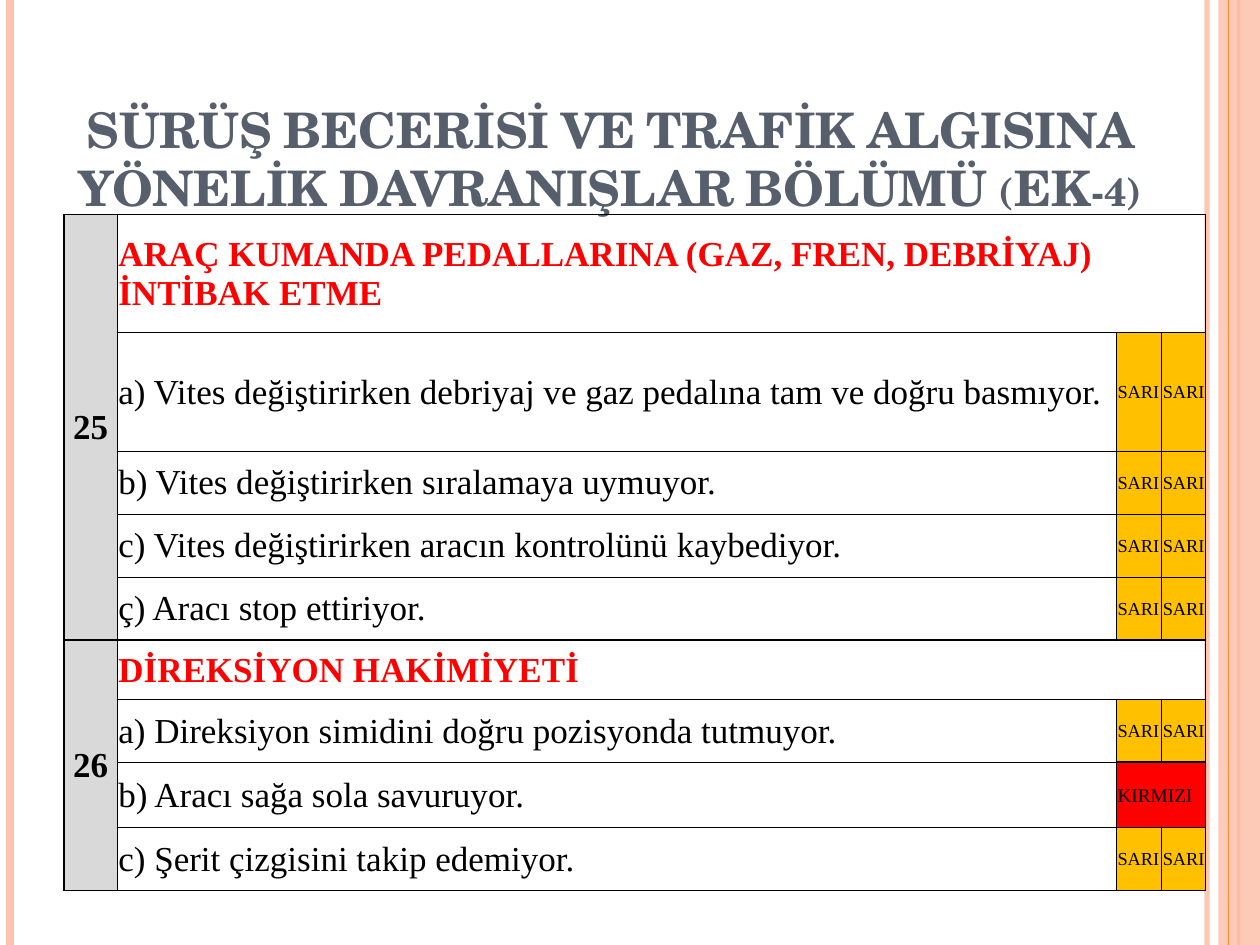
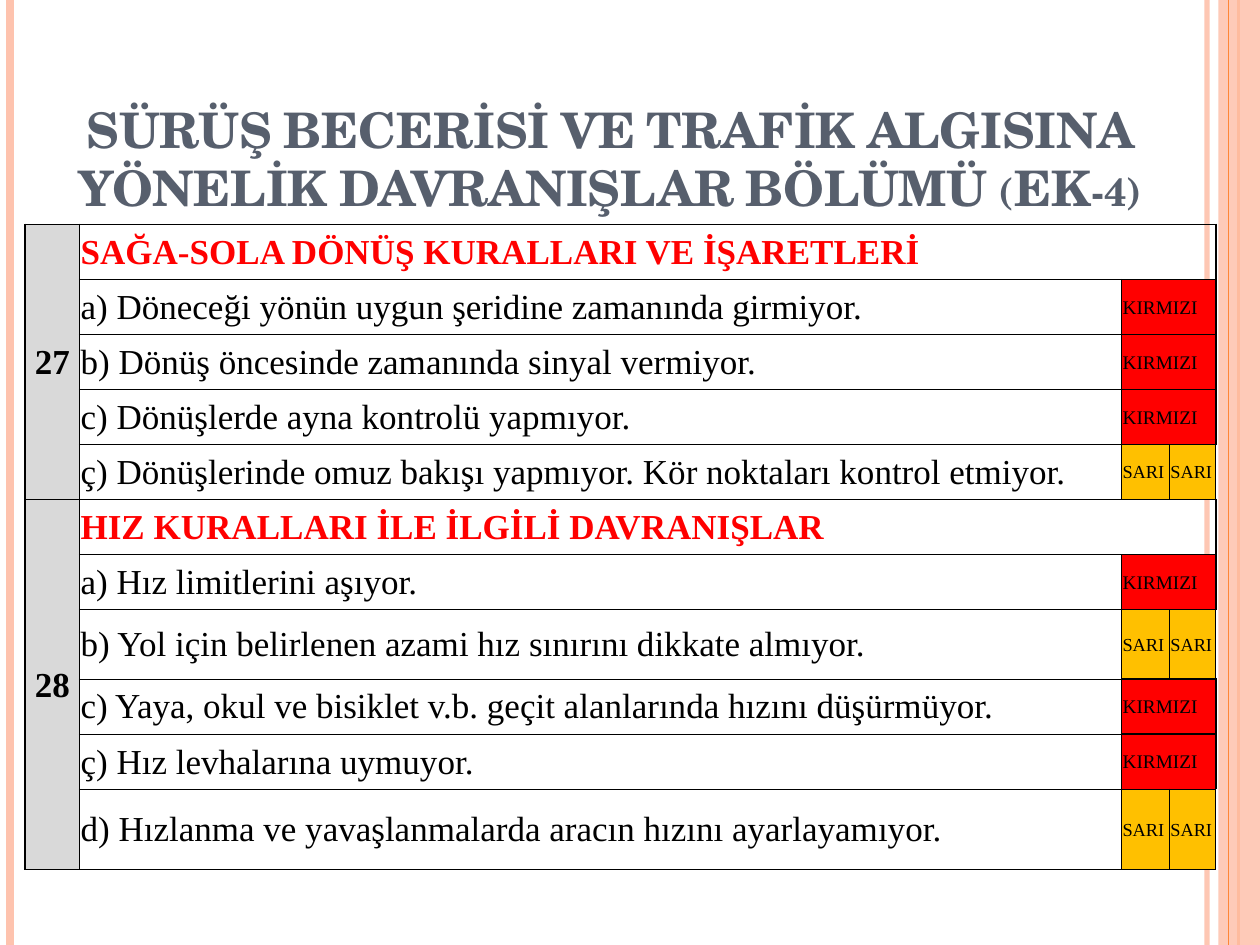
"""Build two driving exam criteria slides with a shared title, side bands and tables."""
import lxml.etree
import pptx
import pptx.dml.color
import pptx.enum.shapes
import pptx.enum.text
import pptx.oxml.ns
import pptx.util

qn = pptx.oxml.ns.qn
ANCHOR = pptx.enum.text.MSO_ANCHOR
ALIGN = pptx.enum.text.PP_ALIGN

PEACH, ORANGE, SLATE = "FEC3AE", "FE8637", "575F6D"
BLACK, GREY, RED, YELLOW = "000000", "D9D9D9", "FF0000", "FFC000"
TITLE = "SÜRÜŞ BECERİSİ VE TRAFİK ALGISINA YÖNELİK DAVRANIŞLAR BÖLÜMÜ (EK-4)"

# left %, band width % or None, line points or None, colour, opacity %
BANDS = [
    (95.8, None, 3, PEACH, 93),
    (0.8, None, 4.5, PEACH, 100),
    (98.3, None, 1.5, ORANGE, 100),
    (96.7, 3.3, None, PEACH, 87),
    (97.5, None, 0.75, ORANGE, 100),
]

CELL_FORMATS = {
    "number": {"size": 20, "bold": True, "text": BLACK, "fill": GREY, "thick": "LTB"},
    "heading": {"size": 20, "bold": True, "text": RED, "fill": None, "thick": "TR"},
    "criterion": {"size": 20, "bold": False, "text": BLACK, "fill": None, "thick": ""},
    "SARI": {"size": 10.5, "bold": False, "text": BLACK, "fill": YELLOW, "thick": ""},
    "KIRMIZI": {"size": 11, "bold": False, "text": BLACK, "fill": RED, "thick": "TR"},
}

TABLES = [
    {
        "left": 5.1, "top": 22.67, "columns": [4.2, 79.3, 3.6, 3.5],
        "sections": [
            ("25", "ARAÇ KUMANDA PEDALLARINA (GAZ, FREN, DEBRİYAJ) İNTİBAK ETME", 12.53, [
                ("a) Vites değiştirirken debriyaj ve gaz pedalına tam ve doğru basmıyor.", "SARI", 12.53),
                ("b) Vites değiştirirken sıralamaya uymuyor.", "SARI", 6.67),
                ("c) Vites değiştirirken aracın kontrolünü kaybediyor.", "SARI", 6.67),
                ("ç) Aracı stop ettiriyor.", "SARI", 6.67),
            ]),
            ("26", "DİREKSİYON HAKİMİYETİ", 6.27, [
                ("a) Direksiyon simidini doğru pozisyonda tutmuyor.", "SARI", 6.67),
                ("b) Aracı sağa sola savuruyor.", "KIRMIZI", 6.93),
                ("c) Şerit çizgisini takip edemiyor.", "SARI", 6.67),
            ]),
        ],
    },
    {
        "left": 2, "top": 23.73, "columns": [4.3, 82.7, 3.8, 3.7],
        "sections": [
            ("27", "SAĞA-SOLA DÖNÜŞ KURALLARI VE İŞARETLERİ", 5.83, [
                ("a) Döneceği yönün uygun şeridine zamanında girmiyor.", "KIRMIZI", 5.83),
                ("b) Dönüş öncesinde zamanında sinyal vermiyor.", "KIRMIZI", 5.83),
                ("c) Dönüşlerde ayna kontrolü yapmıyor.", "KIRMIZI", 5.83),
                ("ç) Dönüşlerinde omuz bakışı yapmıyor. Kör noktaları kontrol etmiyor.", "SARI", 5.83),
            ]),
            ("28", "HIZ KURALLARI İLE İLGİLİ DAVRANIŞLAR", 5.83, [
                ("a) Hız limitlerini aşıyor.", "KIRMIZI", 5.83),
                ("b) Yol için belirlenen azami hız sınırını dikkate almıyor.", "SARI", 7.33),
                ("c) Yaya, okul ve bisiklet v.b. geçit alanlarında hızını düşürmüyor.", "KIRMIZI", 5.83),
                ("ç) Hız levhalarına uymuyor.", "KIRMIZI", 5.83),
                ("d) Hızlanma ve yavaşlanmalarda aracın hızını ayarlayamıyor.", "SARI", 8.53),
            ]),
        ],
    },
]


def colour(value):
    return pptx.dml.color.RGBColor.from_string(value)


def write_cell(cell, text, kind):
    style = CELL_FORMATS[kind]
    properties = cell._tc.get_or_add_tcPr()
    for side in "LRTB":
        width = pptx.util.Pt(1 if side in style["thick"] else 0.5)
        border = lxml.etree.SubElement(properties, qn(f"a:ln{side}"), w=str(width))
        solid = lxml.etree.SubElement(border, qn("a:solidFill"))
        lxml.etree.SubElement(solid, qn("a:srgbClr"), val=BLACK)
    if style["fill"]:
        cell.fill.solid()
        cell.fill.fore_color.rgb = colour(style["fill"])
    else:
        cell.fill.background()
    inset = pptx.util.Inches(0.01)
    layout = {"margin_left": inset, "margin_top": inset, "margin_right": inset,
              "margin_bottom": 0, "vertical_anchor": ANCHOR.MIDDLE}
    for name, value in layout.items():
        setattr(cell, name, value)
    paragraph = cell.text_frame.paragraphs[0]
    paragraph.alignment = ALIGN.CENTER if kind == "number" else ALIGN.LEFT
    run = paragraph.add_run()
    run.text = text
    font = {"name": "Times New Roman", "size": pptx.util.Pt(style["size"]), "bold": style["bold"]}
    for name, value in font.items():
        setattr(run.font, name, value)
    run.font.color.rgb = colour(style["text"])


presentation = pptx.Presentation()
presentation.slide_width = pptx.util.Inches(10)
presentation.slide_height = pptx.util.Inches(7.5)
column_unit = presentation.slide_width // 100
row_unit = presentation.slide_height // 100

for content in TABLES:
    slide = presentation.slides.add_slide(presentation.slide_layouts[6])

    for left, band_width, line_width, shade, opacity in BANDS:
        x = int(left * column_unit)
        if band_width:
            shape = slide.shapes.add_shape(
                pptx.enum.shapes.MSO_SHAPE.RECTANGLE, x, 0,
                int(band_width * column_unit), presentation.slide_height)
            shape.shadow.inherit = False
            shape.fill.solid()
            shape.fill.fore_color.rgb = colour(shade)
            shape.line.fill.background()
        else:
            shape = slide.shapes.add_connector(
                pptx.enum.shapes.MSO_CONNECTOR.STRAIGHT, x, 0, x, presentation.slide_height)
            shape.line.width = pptx.util.Pt(line_width)
            shape.line.color.rgb = colour(shade)
            lxml.etree.SubElement(shape._element.spPr, qn("a:effectLst"))
        if opacity < 100:
            for element in list(shape._element.spPr.iter(qn("a:srgbClr"))):
                lxml.etree.SubElement(element, qn("a:alpha"), val=str(opacity * 1000))

    title = slide.shapes.add_textbox(
        int(2.8 * column_unit), int(6.93 * row_unit),
        int(91.3 * column_unit), int(16.67 * row_unit))
    title.text_frame.word_wrap = True
    title.text_frame.vertical_anchor = ANCHOR.BOTTOM
    paragraph = title.text_frame.paragraphs[0]
    paragraph.alignment = ALIGN.CENTER
    run = paragraph.add_run()
    run.text = TITLE
    for name, value in {"name": "TeX Gyre Schola", "size": pptx.util.Pt(28), "bold": True}.items():
        setattr(run.font, name, value)
    run.font.color.rgb = colour(SLATE)
    run._r.get_or_add_rPr().set("cap", "small")

    heights = []
    for number, heading, heading_height, criteria in content["sections"]:
        heights += [heading_height] + [height for text, mark, height in criteria]
    table = slide.shapes.add_table(
        len(heights), len(content["columns"]),
        int(content["left"] * column_unit), int(content["top"] * row_unit),
        int(sum(content["columns"]) * column_unit), int(sum(heights) * row_unit)).table
    table.first_row = False
    table.horz_banding = False
    for column, width in zip(table.columns, content["columns"]):
        column.width = int(width * column_unit)
    for row, height in zip(table.rows, heights):
        row.height = int(height * row_unit)

    start = 0
    for number, heading, heading_height, criteria in content["sections"]:
        end = start + len(criteria)
        table.cell(start, 0).merge(table.cell(end, 0))
        table.cell(start, 1).merge(table.cell(start, 3))
        write_cell(table.cell(start, 0), number, "number")
        write_cell(table.cell(start, 1), heading, "heading")
        for index, (text, mark, height) in enumerate(criteria, start + 1):
            write_cell(table.cell(index, 1), text, "criterion")
            write_cell(table.cell(index, 2), mark, mark)
            if mark == "KIRMIZI":
                table.cell(index, 2).merge(table.cell(index, 3))
            else:
                write_cell(table.cell(index, 3), mark, mark)
        start = end + 1

presentation.save("out.pptx")
